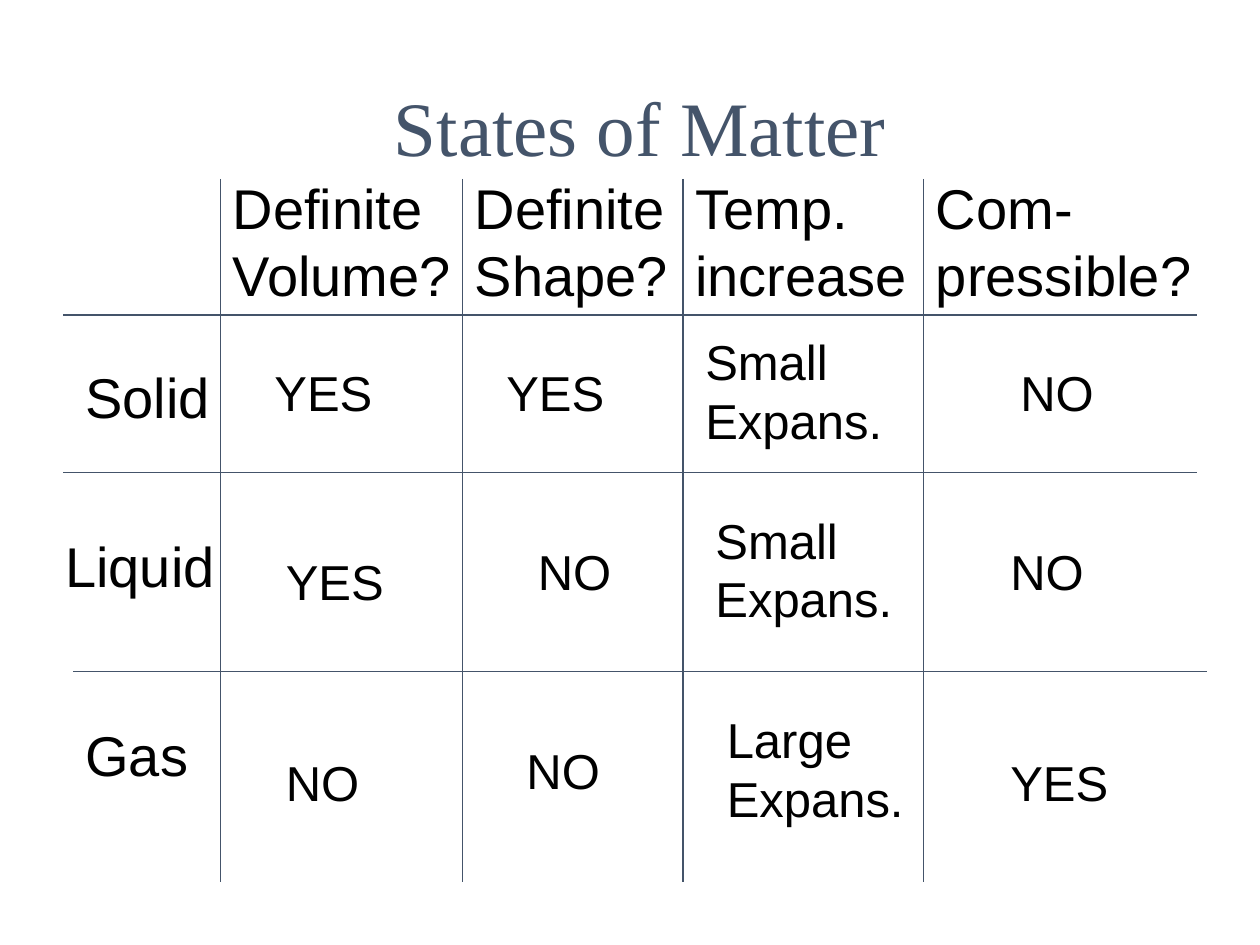
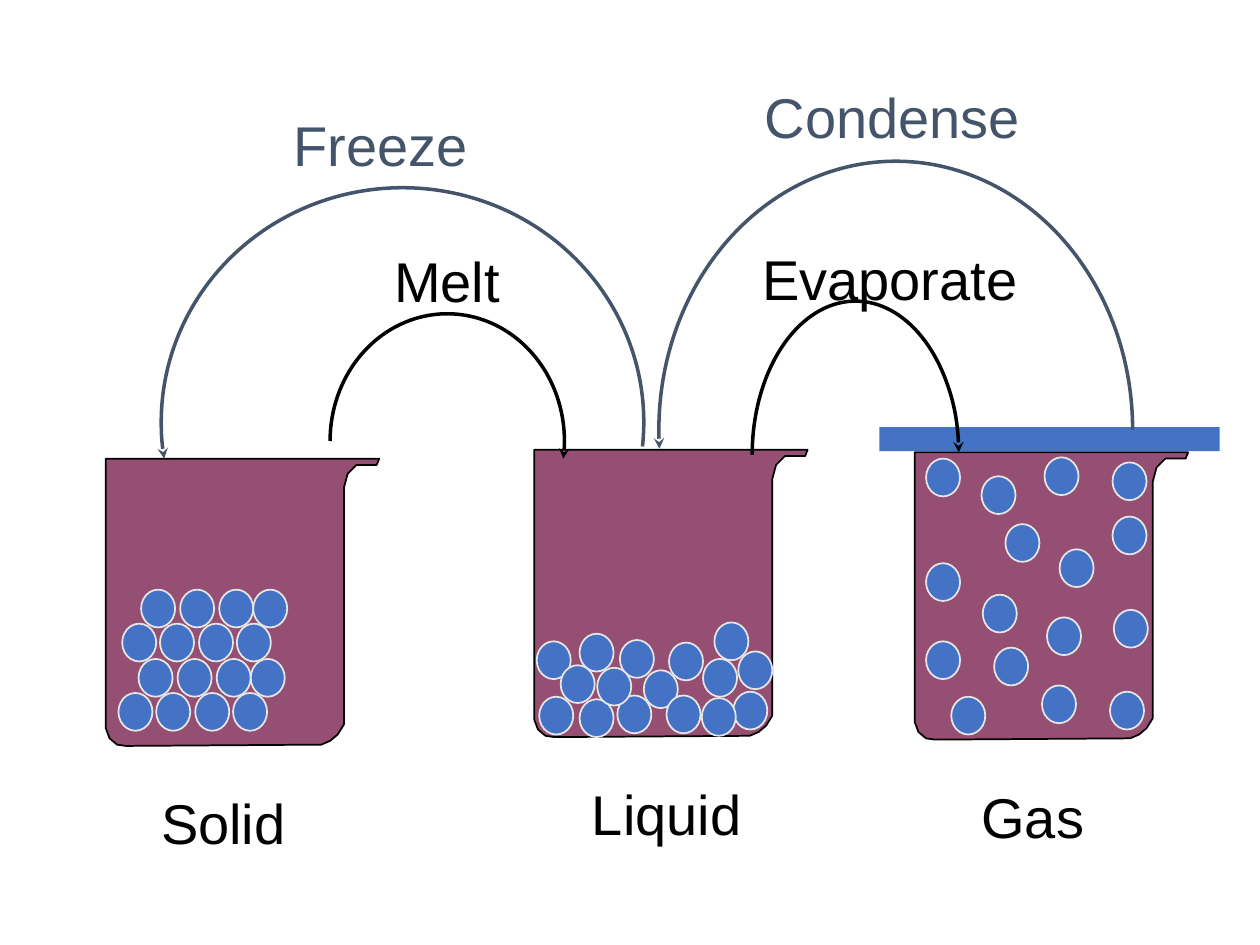
from pptx import Presentation
from pptx.dml.color import RGBColor
from pptx.enum.shapes import MSO_CONNECTOR, MSO_SHAPE
from pptx.enum.text import MSO_ANCHOR, MSO_AUTO_SIZE, PP_ALIGN
from pptx.oxml import parse_xml
from pptx.oxml.ns import nsdecls
from pptx.util import Inches, Pt

# Shared look
SLATE, BLACK, BLUE, PLUM, PALE = "44546A", "000000", "4472C4", "954F72", "E7E6E6"
BODY_FONT, TITLE_FONT = "Arial", "Times New Roman"
HEADING_SIZE, ANSWER_SIZE = 32, 28

# Comparison grid, relative to its top left corner
COLUMN_LINES = (1.25, 3.17, 4.92, 6.83)
ROW_LINES = ((0, 1.17), (0, 2.42), (0.08, 4))
HEADINGS = (("Definite Volume?", 2.08), ("Definite Shape?", 2.08),
            ("Temp. increase", 2.08), ("Com-pressible?", 2.25))
STATE_ROWS = (
    ("Solid", 0.08, 1.5, (("YES", 1.58, 1.5), ("YES", 3.42, 1.5),
                          ("Small Expans.", 5, 1.25), ("NO", 7.5, 1.5))),
    ("Liquid", -0.08, 2.84, (("YES", 1.67, 3), ("NO", 3.67, 2.92),
                             ("Small Expans.", 5.08, 2.67), ("NO", 7.42, 2.92))),
    ("Gas", 0.08, 4.34, (("NO", 1.67, 4.59), ("NO", 3.58, 4.5),
                         ("Large Expans.", 5.17, 4.25), ("YES", 7.42, 4.59))),
)

# Beaker outline and particles, relative to the beaker's top left corner
BEAKER = ((0, 0), (0, 2.14), (0.03, 2.22), (0.09, 2.27), (0.16, 2.28), (1.71, 2.27),
          (1.78, 2.24), (1.84, 2.19), (1.89, 2.11), (1.89, 0.23), (1.92, 0.12),
          (1.99, 0.05), (2.15, 0.05), (2.17, 0))
EVEN_STEPS, SHIFTED_STEPS = (0, 0.3, 0.61, 0.91), (0, 0.31, 0.62, 0.89)
SOLID_LAYERS = ((0.1, 1.86, EVEN_STEPS), (0.26, 1.59, SHIFTED_STEPS),
                (0.13, 1.31, EVEN_STEPS), (0.28, 1.04, SHIFTED_STEPS))
SOLID = [(x + step, y) for x, y, steps in SOLID_LAYERS for step in steps]
LIQUID = ((0.04, 1.96), (0.68, 1.51), (0.36, 1.98), (0.66, 1.95), (1.58, 1.92),
          (0.87, 1.75), (1.33, 1.97), (1.62, 1.6), (0.02, 1.52), (1.05, 1.95),
          (1.34, 1.66), (0.36, 1.46), (0.21, 1.71), (0.5, 1.73), (1.07, 1.53),
          (1.43, 1.37))
GAS = ((0.29, 1.94), (1.01, 1.85), (0.53, 0.19), (1.55, 1.9), (0.09, 1.5),
       (0.63, 1.55), (1.58, 1.25), (1.57, 0.08), (0.09, 0.88), (0.54, 1.13),
       (1.05, 1.31), (1.15, 0.77), (0.09, 0.05), (1.03, 0.04), (0.72, 0.57),
       (1.57, 0.51))
BEAKERS = (("Solid", 0.84, 3.64, SOLID, 0.34), ("Liquid", 4.24, 3.57, LIQUID, 0.36),
           ("Gas", 7.26, 3.59, GAS, 0.43))

# Changes of state: label, its box, arc box, start and end angle, arrow end, colour
CHANGES = (
    ("Melt", (3.03, 1.91, 1.25), (2.62, 2.49, 1.86, 2.02), (180, 8.7), "tailEnd", BLACK),
    ("Evaporate", (5.95, 1.89, 2.27), (5.97, 2.39, 1.64, 2.44), (180, 358.6), "tailEnd", BLACK),
    ("Condense", (5.97, 0.61, 2.27), (5.23, 1.28, 3.76, 4.26), (175.4, 0), "headEnd", SLATE),
    ("Freeze", (2.23, 0.83, 2.27), (1.28, 1.49, 3.83, 3.72), (171.3, 5.8), "headEnd", SLATE),
)


def rgb(value):
    return RGBColor.from_string(value)


def inches(*lengths):
    return [Inches(length) for length in lengths]


def write(frame, text, size=HEADING_SIZE, color=BLACK, font=BODY_FONT, align=PP_ALIGN.LEFT):
    frame.word_wrap = True
    frame.auto_size = MSO_AUTO_SIZE.NONE
    frame.vertical_anchor = MSO_ANCHOR.TOP
    paragraph = frame.paragraphs[0]
    paragraph.alignment = align
    run = paragraph.add_run()
    run.text = text
    run.font.size = Pt(size)
    run.font.name = font
    run.font.color.rgb = rgb(color)


def add_label(slide, text, left, top, width, height=0.63, **style):
    box = slide.shapes.add_textbox(*inches(left, top, width, height))
    write(box.text_frame, text, **style)


def paint(shape, fill=None, line=None, weight=1):
    shape.shadow.inherit = False
    if fill:
        shape.fill.solid()
        shape.fill.fore_color.rgb = rgb(fill)
    else:
        shape.fill.background()
    if line:
        shape.line.color.rgb = rgb(line)
        shape.line.width = Pt(weight)
    else:
        shape.line.fill.background()


def add_rule(slide, *ends):
    rule = slide.shapes.add_connector(MSO_CONNECTOR.STRAIGHT, *inches(*ends))
    rule.line.color.rgb = rgb(SLATE)
    rule.line.width = Pt(1)
    rule._element.spPr.append(parse_xml(f"<a:effectLst {nsdecls('a')}/>"))


def add_comparison(slide, left, top, width, height):
    # Column headings and state rows
    for x, (heading, heading_width) in zip(COLUMN_LINES, HEADINGS):
        add_label(slide, heading, left + x, top, heading_width, 1.17)
    for state, x, y, answers in STATE_ROWS:
        add_label(slide, state, left + x, top + y, 1.5)
        for answer, answer_x, answer_y in answers:
            long = " " in answer
            add_label(slide, answer, left + answer_x, top + answer_y, 1.83 if long else 1,
                      1.03 if long else 0.57, size=ANSWER_SIZE)
    # Grid lines
    for x, y in ROW_LINES:
        add_rule(slide, left + x, top + y, left + x + width, top + y)
    for x in COLUMN_LINES:
        add_rule(slide, left + x, top + 0.09, left + x, top + height)


def add_beaker(slide, left, top, particles):
    points = [inches(left + x, top + y) for x, y in BEAKER]
    outline = slide.shapes.build_freeform(*points[0])
    outline.add_line_segments(points[1:], close=True)
    paint(outline.convert_to_shape(), PLUM, BLACK)
    for x, y in particles:
        particle = slide.shapes.add_shape(
            MSO_SHAPE.OVAL, *inches(left + x, top + y, 0.27, 0.3))
        paint(particle, BLUE, PALE)


def add_lid(slide, left, top):
    lid = slide.shapes.add_shape(MSO_SHAPE.RECTANGLE, *inches(left, top, 2.7, 0.19))
    paint(lid, BLUE)


def add_change(slide, label, label_box, arc_box, angles, arrow_end, color):
    arc = slide.shapes.add_shape(MSO_SHAPE.ARC, *inches(*arc_box))
    for index, angle in enumerate(angles):
        arc.adjustments[index] = angle * 0.6  # 60000ths of a degree over 100000
    paint(arc, line=color, weight=2)
    arc.line._get_or_add_ln().append(
        parse_xml(f'<a:{arrow_end} {nsdecls("a")} type="stealth"/>'))
    add_label(slide, label, *label_box, color=color)


def build_states_slide(deck):
    slide = deck.slides.add_slide(deck.slide_layouts[5])
    title = slide.shapes.title
    title.left, title.top, title.width, title.height = inches(0.83, 0.58, 8.5, 0.83)
    write(title.text_frame, "States of Matter", size=44, color=SLATE, font=TITLE_FONT,
          align=PP_ALIGN.CENTER)
    add_comparison(slide, 0.5, 1.33, 9, 5.67)


def build_changes_slide(deck):
    slide = deck.slides.add_slide(deck.slide_layouts[6])
    for state, left, top, particles, indent in BEAKERS:
        add_beaker(slide, left, top, particles)
        add_label(slide, state, left + indent, top + 2.57, 1.57)
    add_lid(slide, 6.98, 3.39)
    for change in CHANGES:
        add_change(slide, *change)


def main():
    deck = Presentation()
    deck.slide_width, deck.slide_height = inches(10, 7.5)
    build_states_slide(deck)
    build_changes_slide(deck)
    deck.save("out.pptx")


if __name__ == "__main__":
    main()
